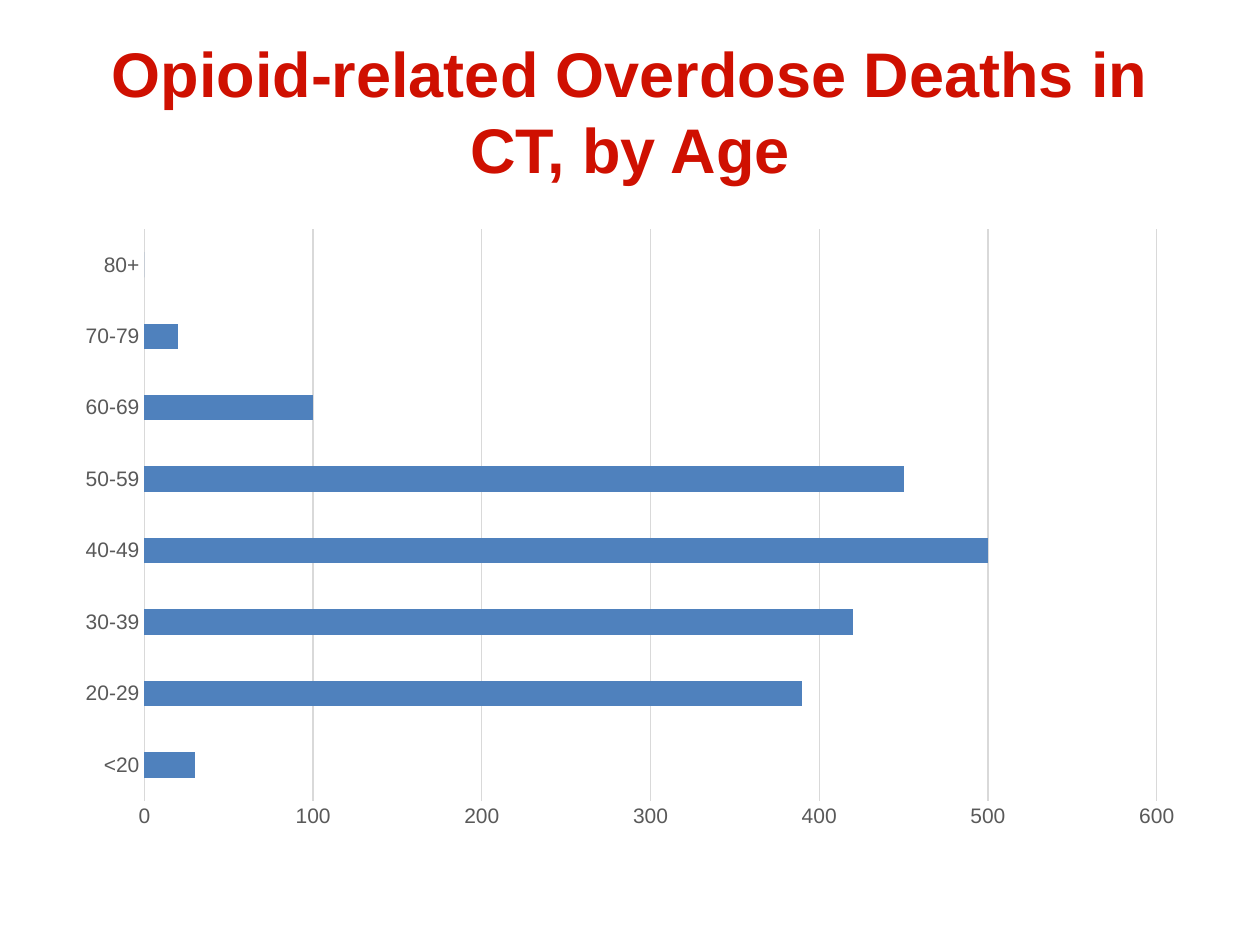
from dataclasses import dataclass

from pptx import Presentation
from pptx.chart.data import CategoryChartData
from pptx.dml.color import RGBColor
from pptx.enum.chart import XL_CHART_TYPE, XL_TICK_MARK
from pptx.enum.text import MSO_ANCHOR, PP_ALIGN
from pptx.util import Inches, Pt

BAR = XL_CHART_TYPE.BAR_CLUSTERED
NO_TICK = XL_TICK_MARK.NONE
MIDDLE = MSO_ANCHOR.MIDDLE
CENTER = PP_ALIGN.CENTER

FONT = "Arial"
COLORS = {"title": "CF1001", "bar": "4F81BD", "label": "595959", "grid": "D9D9D9"}


@dataclass
class AgeGroup:
    label: str
    deaths: int


AGE_GROUPS = [
    AgeGroup("<20", 30),
    AgeGroup("20-29", 390),
    AgeGroup("30-39", 420),
    AgeGroup("40-49", 500),
    AgeGroup("50-59", 450),
    AgeGroup("60-69", 100),
    AgeGroup("70-79", 20),
    AgeGroup("80+", 0),
]


def color(name: str) -> RGBColor:
    return RGBColor.from_string(COLORS[name])


def style_font(font, size: float, name: str) -> None:
    font.name = FONT
    font.size = Pt(size)
    font.color.rgb = color(name)


def style_line(line) -> None:
    line.color.rgb = color("grid")
    line.width = Pt(0.75)


def style_axis(axis) -> None:
    axis.major_tick_mark = axis.minor_tick_mark = NO_TICK
    style_font(axis.tick_labels.font, 12, "label")


def add_title(s) -> None:
    title = s.shapes.title
    title.left, title.top = Inches(0.5), Inches(0.25)
    title.width, title.height = Inches(9), Inches(1.25)
    tf = title.text_frame
    tf.text = "Opioid-related Overdose Deaths in CT, by Age"
    tf.word_wrap = True
    tf.vertical_anchor = MIDDLE
    p = tf.paragraphs[0]
    p.alignment = CENTER
    r = p.runs[0]
    style_font(r.font, 36, "title")
    r.font.bold = True


def add_age_chart(s, groups: list[AgeGroup]) -> None:
    data = CategoryChartData()
    data.categories = [g.label for g in groups]
    data.add_series("Series 1", [g.deaths for g in groups])
    chart = s.shapes.add_chart(
        BAR, Inches(0.5), Inches(1.72), Inches(9), Inches(4.95), data
    ).chart
    chart.has_legend = False
    chart.has_title = False
    style_font(chart.font, 12, "label")

    plot = chart.plots[0]
    plot.gap_width = 182
    plot.vary_by_categories = False
    fill = plot.series[0].format.fill
    fill.solid()
    fill.fore_color.rgb = color("bar")

    style_axis(chart.category_axis)
    style_line(chart.category_axis.format.line)
    values = chart.value_axis
    style_axis(values)
    values.minimum_scale, values.maximum_scale, values.major_unit = 0, 600, 100
    values.format.line.fill.background()
    values.has_major_gridlines = True
    style_line(values.major_gridlines.format.line)


def main() -> None:
    prs = Presentation()
    prs.slide_width, prs.slide_height = Inches(10), Inches(7.5)
    s = prs.slides.add_slide(prs.slide_layouts[5])
    add_title(s)
    add_age_chart(s, AGE_GROUPS)
    prs.save("out.pptx")


if __name__ == "__main__":
    main()
